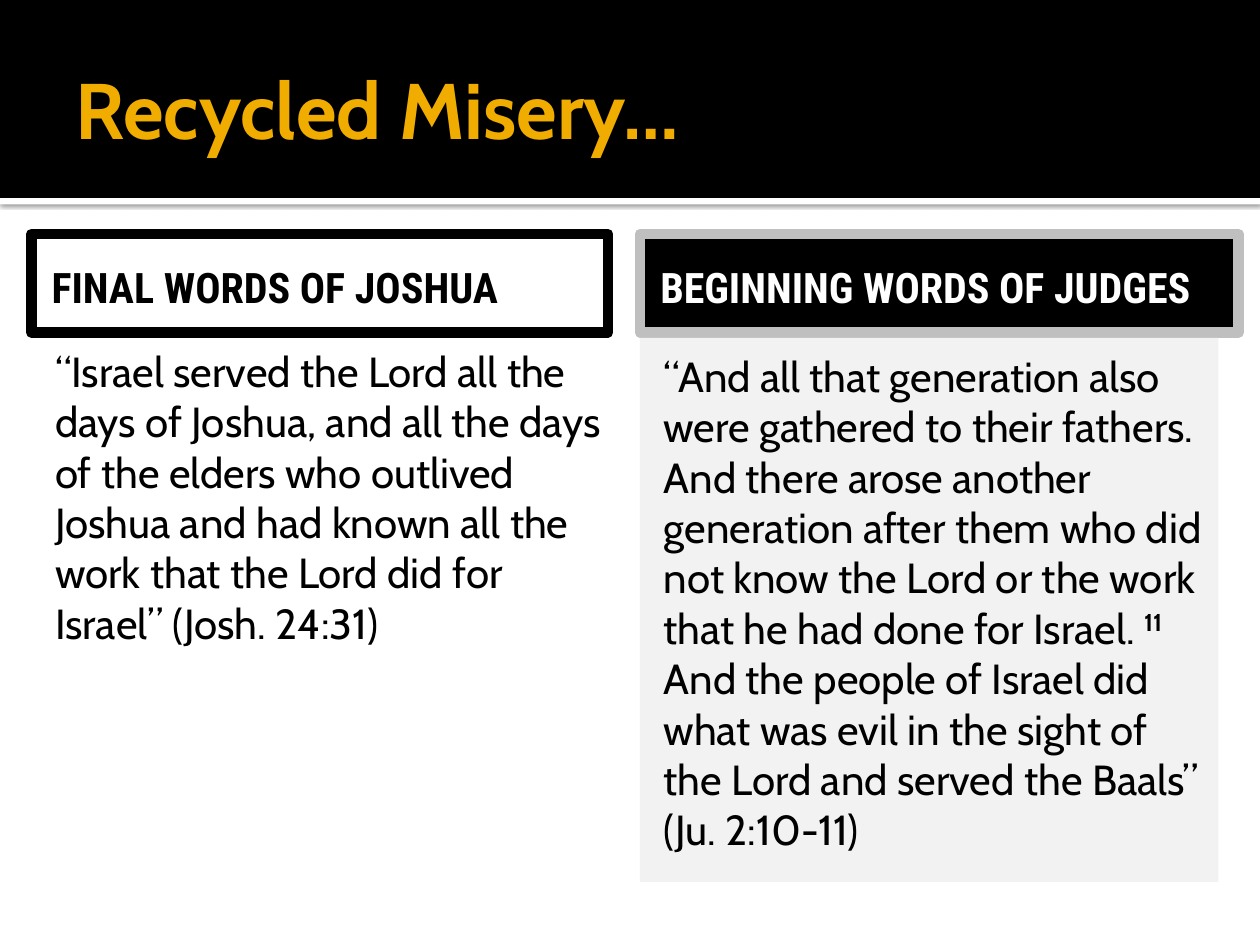
from lxml.etree import SubElement
from pptx import Presentation
from pptx.dml.color import RGBColor
from pptx.enum.shapes import MSO_SHAPE
from pptx.enum.text import MSO_ANCHOR, MSO_AUTO_SIZE, PP_ALIGN
from pptx.oxml import parse_xml
from pptx.oxml.ns import nsdecls, qn
from pptx.util import Cm, Pt

BLACK = RGBColor(0x00, 0x00, 0x00)
WHITE = RGBColor(0xFF, 0xFF, 0xFF)
GOLD = RGBColor(0xF0, 0xAD, 0x00)
SILVER = RGBColor(0xBF, 0xBF, 0xBF)
PALE = RGBColor(0xF2, 0xF2, 0xF2)

TEXT_FONT = "Cabin"
HEADING_FONT = "Roboto Condensed"
PAGE_WIDTH, PAGE_HEIGHT = 25.4, 19.05
BANNER_HEIGHT = 3.99
HEADING_HEIGHT = 1.98

JOSHUA = [
    ("“Israel served the Lord all the days of Joshua, and all the days of "
     "the elders who outlived Joshua and had known all the work that "
     "the Lord did for Israel” (Josh. 24:31)", False),
]
JUDGES = [
    ("“And all that generation also were gathered to their fathers. And there "
     "arose another generation after them who did not know the Lord or the "
     "work that he had done for Israel. ", False),
    ("11 ", True),
    ("And the people of Israel did what was evil in the sight of the Lord and "
     "served the Baals” (Ju. 2:10-11)", False),
]


def place(shape, left, top, width, height):
    shape.left, shape.top = Cm(left), Cm(top)
    shape.width, shape.height = Cm(width), Cm(height)


def prepare_text(box, anchor, insets):
    """Set up the frame and return its first paragraph, without a bullet."""
    frame = box.text_frame
    frame.word_wrap = True
    frame.auto_size = MSO_AUTO_SIZE.NONE
    frame.vertical_anchor = anchor
    (frame.margin_left, frame.margin_top,
     frame.margin_right, frame.margin_bottom) = [Cm(inset) for inset in insets]
    para = frame.paragraphs[0]
    para.alignment = PP_ALIGN.LEFT
    para.space_before = Pt(0)
    properties = para._p.get_or_add_pPr()
    properties.set("marL", "0")
    properties.set("indent", "0")
    SubElement(properties, qn("a:buNone"))
    return para


def add_span(para, text, font, size, color, bold=False):
    span = para.add_run()
    span.text = text
    span.font.name = font
    span.font.size = Pt(size)
    span.font.color.rgb = color
    span.font.bold = bold
    return span


def add_band(page, top, height, color):
    band = page.shapes.add_shape(
        MSO_SHAPE.RECTANGLE, 0, Cm(top), Cm(PAGE_WIDTH), Cm(height))
    band.shadow.inherit = False
    band.fill.solid()
    band.fill.fore_color.rgb = color
    band.line.fill.background()
    return band


def build_banner(page):
    # Black band over a white strip with a soft shadow
    strip = add_band(page, BANNER_HEIGHT, 0.13, WHITE)
    effects = strip.element.spPr.find(qn("a:effectLst"))
    effects.append(parse_xml(
        f'<a:outerShdw {nsdecls("a")} blurRad="{Pt(2.5)}" dist="{Pt(0.8)}" '
        'dir="5400000" algn="tl" rotWithShape="0"><a:srgbClr val="000000">'
        '<a:alpha val="60000"/></a:srgbClr></a:outerShdw>'))
    band = add_band(page, 0, BANNER_HEIGHT, BLACK)

    # Bands go behind the placeholders
    tree = strip.element.getparent()
    tree.insert(2, strip.element)
    tree.insert(3, band.element)

    # Title
    title = page.shapes.title
    place(title, 1.27, 0.43, 22.86, 3.48)
    para = prepare_text(title, MSO_ANCHOR.MIDDLE, (0.25, 0.13, 0.13, 0.13))
    add_span(para, "Recycled Misery…", TEXT_FONT, 45, GOLD, bold=True)


def build_heading(box, bounds, text, fill, border, color):
    place(box, *bounds)
    box.fill.solid()
    box.fill.fore_color.rgb = fill
    box.line.width = Pt(6)
    box.line.color.rgb = border
    SubElement(box.element.spPr.find(qn("a:ln")), qn("a:round"))
    para = prepare_text(box, MSO_ANCHOR.MIDDLE, (0.41, 0.25, 0.25, 0.13))
    add_span(para, text, HEADING_FONT, 24, color, bold=True)


def build_passage(box, bounds, parts, fill=None):
    place(box, *bounds)
    if fill is not None:
        box.fill.solid()
        box.fill.fore_color.rgb = fill
    para = prepare_text(box, MSO_ANCHOR.TOP, (0.15, 0.25, 0.25, 0.13))
    para._p.get_or_add_pPr().set("marL", str(Cm(0.33)))
    for text, is_verse_number in parts:
        span = add_span(para, text, TEXT_FONT, 24, BLACK, is_verse_number)
        if is_verse_number:
            span._r.get_or_add_rPr().set("baseline", "30000")


def main():
    deck = Presentation()
    deck.slide_width, deck.slide_height = Cm(PAGE_WIDTH), Cm(PAGE_HEIGHT)
    page = deck.slides.add_slide(deck.slide_layouts.get_by_name("Comparison"))
    boxes = {box.placeholder_format.idx: box for box in page.placeholders}

    build_banner(page)

    # Left column
    build_heading(boxes[1], (0.63, 4.72, 11.63, HEADING_HEIGHT),
                  "FINAL WORDS OF JOSHUA", WHITE, BLACK, BLACK)
    build_passage(boxes[2], (0.63, 6.71, 11.86, 11.07), JOSHUA)

    # Right column
    build_heading(boxes[3], (12.9, 4.72, 12.07, HEADING_HEIGHT),
                  "BEGINNING WORDS OF JUDGES", BLACK, SILVER, WHITE)
    build_passage(boxes[4], (12.9, 6.81, 11.66, 10.97), JUDGES, PALE)

    deck.save("out.pptx")


if __name__ == "__main__":
    main()
